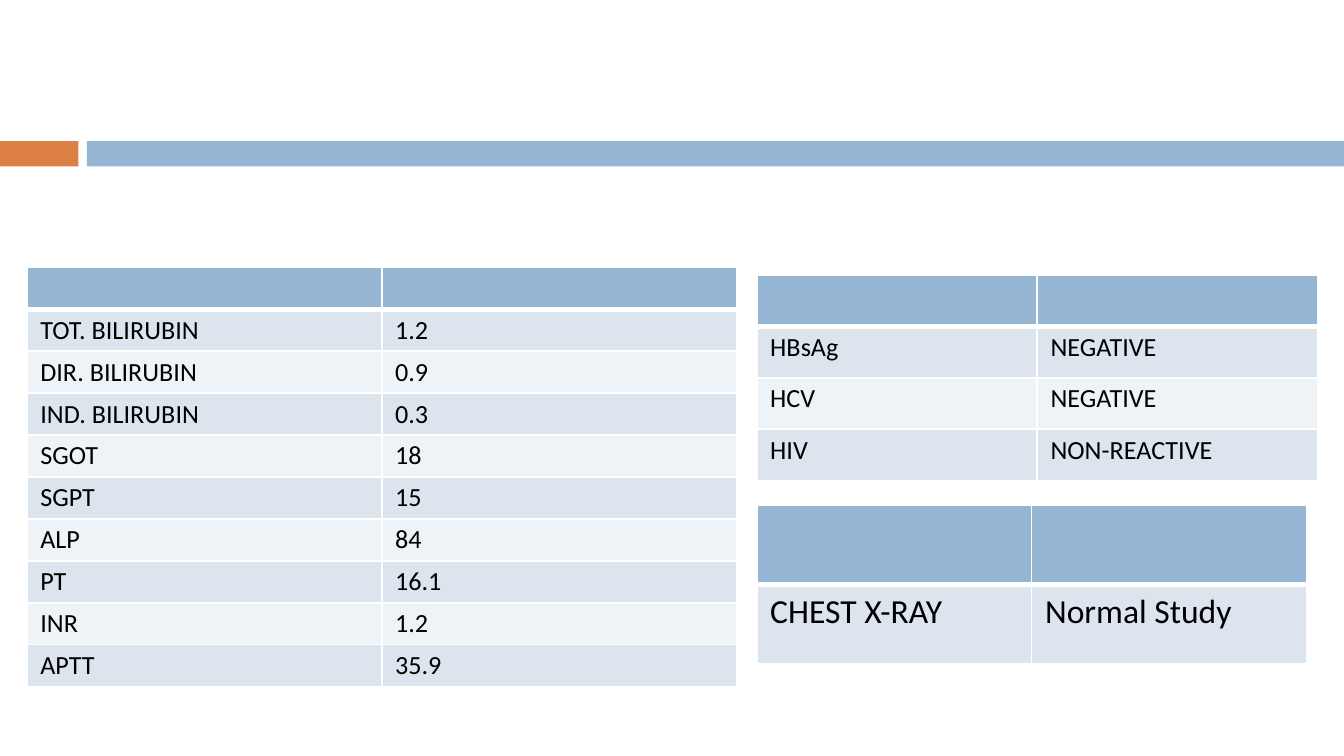
from lxml.etree import SubElement
from pptx import Presentation
from pptx.dml.color import RGBColor
from pptx.enum.shapes import MSO_SHAPE
from pptx.oxml.ns import qn
from pptx.util import Pt

COLORS = {
    "orange": "DD8047",
    "blue": "94B6D2",
    "band": "DCE5EE",
    "light": "EEF3F7",
    "white": "FFFFFF",
    "text": "000000",
}
FONT = "Calibri"

BARS = [(0, 42, "orange"), (46.6, 673.4, "blue")]
BAR_TOP, BAR_HEIGHT = 75.6, 13.6

HEADER = ("", "")
TABLES = [
    {
        "at": (14.4, 143.3), "col": 190.1, "row": 22.2, "size": 14, "margin": 2.7,
        "rows": [
            HEADER,
            ("TOT. BILIRUBIN", "1.2"),
            ("DIR. BILIRUBIN", "0.9"),
            ("IND. BILIRUBIN", "0.3"),
            ("SGOT", "18"),
            ("SGPT", "15"),
            ("ALP", "84"),
            ("PT", "16.1"),
            ("INR", "1.2"),
            ("APTT", "35.9"),
        ],
    },
    {
        "at": (405.4, 147.2), "col": 150.2, "row": 27.6, "size": 14, "margin": 2.7,
        "rows": [
            HEADER,
            ("HBsAg", "NEGATIVE"),
            ("HCV", "NEGATIVE"),
            ("HIV", "NON-REACTIVE"),
        ],
    },
    {
        "at": (405.4, 270.9), "col": 147.3, "row": 42.4, "size": 18, "margin": 3.6,
        "rows": [HEADER, ("CHEST X-RAY", "Normal Study")],
    },
]


def rgb(name):
    return RGBColor.from_string(COLORS[name])


def add_bar(s, left, width, color):
    sp = s.shapes.add_shape(
        MSO_SHAPE.RECTANGLE, Pt(left), Pt(BAR_TOP), Pt(width), Pt(BAR_HEIGHT))
    sp.shadow.inherit = False
    sp.fill.solid()
    sp.fill.fore_color.rgb = rgb(color)
    sp.line.fill.background()


def set_borders(cell, row):
    tcPr = cell._tc.get_or_add_tcPr()
    widths = {"lnL": 1, "lnR": 1, "lnT": 3 if row == 1 else 1, "lnB": 3 if row == 0 else 1}
    for side, width in widths.items():
        ln = SubElement(tcPr, qn(f"a:{side}"), w=str(Pt(width)))
        fill = SubElement(ln, qn("a:solidFill"))
        SubElement(fill, qn("a:srgbClr"), val=COLORS["white"])


def fill_cell(cell, row, text, size, margin):
    set_borders(cell, row)
    cell.fill.solid()
    cell.fill.fore_color.rgb = rgb("blue" if row == 0 else "band" if row % 2 else "light")
    cell.margin_top = cell.margin_bottom = Pt(margin)
    p = cell.text_frame.paragraphs[0]
    if not text:
        SubElement(p._p, qn("a:endParaRPr"), sz=str(size * 100))
        return
    p.text = text
    font = p.runs[0].font
    font.name, font.size = FONT, Pt(size)
    font.color.rgb = rgb("text")


def add_grid(s, spec):
    rows = spec["rows"]
    n_rows, n_cols = len(rows), len(rows[0])
    left, top = spec["at"]
    table = s.shapes.add_table(
        n_rows, n_cols, Pt(left), Pt(top),
        Pt(spec["col"] * n_cols), Pt(spec["row"] * n_rows)).table
    for column in table.columns:
        column.width = Pt(spec["col"])
    for i, values in enumerate(rows):
        table.rows[i].height = Pt(spec["row"])
        for j, text in enumerate(values):
            fill_cell(table.cell(i, j), i, text, spec["size"], spec["margin"])


prs = Presentation()
prs.slide_width, prs.slide_height = Pt(720), Pt(405)
s = prs.slides.add_slide(prs.slide_layouts[6])
for bar in BARS:
    add_bar(s, *bar)
for spec in TABLES:
    add_grid(s, spec)
prs.save("out.pptx")
